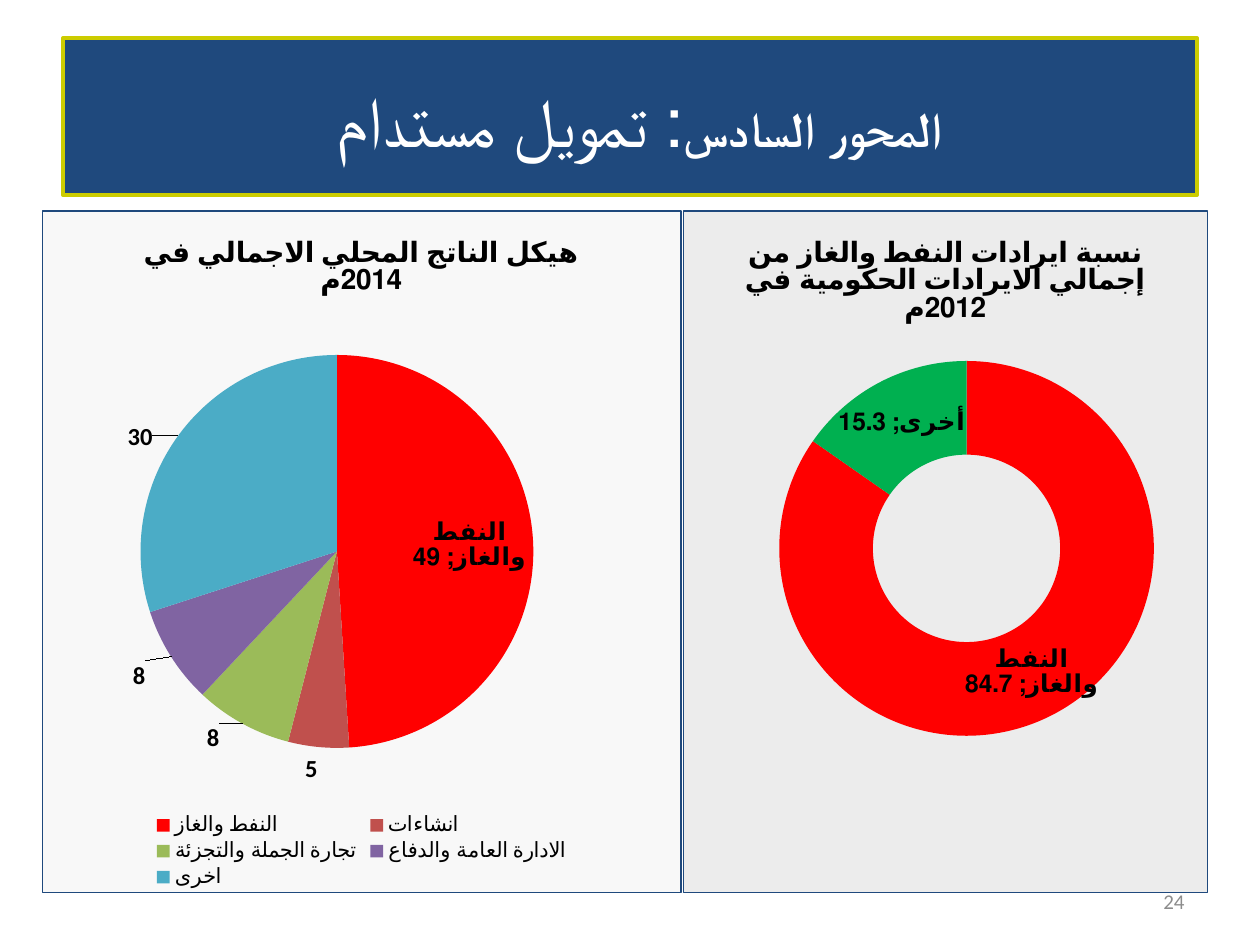
from dataclasses import dataclass

from lxml import etree
from pptx import Presentation
from pptx.chart import data as cd
from pptx.dml.color import RGBColor
from pptx.enum import chart as ch, shapes, text
from pptx.oxml import ns, parse_xml
from pptx.util import Inches, Pt

NAVY = RGBColor(0x1F, 0x49, 0x7D)
OLIVE = RGBColor(0xCC, 0xCC, 0x00)
WHITE = RGBColor(0xFF, 0xFF, 0xFF)
BLACK = RGBColor(0, 0, 0)
GREY = RGBColor(0x8C, 0x8C, 0x8C)
PALE = RGBColor(0xF2, 0xF2, 0xF2)
SILVER = RGBColor(0xD9, 0xD9, 0xD9)
RED = RGBColor(0xFF, 0, 0)
GREEN = RGBColor(0, 0xB0, 0x50)
BRICK = RGBColor(0xC0, 0x50, 0x4D)
LIME = RGBColor(0x9B, 0xBB, 0x59)
PURPLE = RGBColor(0x80, 0x64, 0xA2)
TEAL = RGBColor(0x4B, 0xAC, 0xC6)
FONT = "Calibri"


@dataclass(frozen=True)
class Slice:
    name: str
    value: float
    color: RGBColor
    named: bool = False
    position: ch.XL_LABEL_POSITION | None = None
    shift: tuple[float, float] | None = None


@dataclass(frozen=True)
class Panel:
    kind: ch.XL_CHART_TYPE
    title: str
    left: float
    width: float
    plot: tuple[float, float, float, float]
    background: RGBColor
    opacity: int
    slices: tuple[Slice, ...]
    legend: bool = False


OUTSIDE = ch.XL_LABEL_POSITION.OUTSIDE_END
PANELS = (
    Panel(ch.XL_CHART_TYPE.DOUGHNUT,
          "نسبة ايرادات النفط والغاز من إجمالي الايرادات الحكومية في 2012م",
          5.42, 4.17, (0.18, 0.22, 0.72, 0.55), SILVER, 49,
          (Slice("النفط والغاز", 84.7, RED, True),
           Slice("أخرى", 15.3, GREEN, True))),
    Panel(ch.XL_CHART_TYPE.PIE, "هيكل الناتج المحلي الاجمالي في 2014م",
          0.33, 5.08, (0.154, 0.192, 0.615, 0.615), PALE, 50,
          (Slice("النفط والغاز", 49, RED, True, ch.XL_LABEL_POSITION.INSIDE_END),
           Slice("انشاءات", 5, BRICK, False, OUTSIDE),
           Slice("تجارة الجملة والتجزئة", 8, LIME, False, OUTSIDE, (-0.03, -0.01)),
           Slice("الادارة العامة والدفاع", 8, PURPLE, False, OUTSIDE, (-0.03, 0)),
           Slice("اخرى", 30, TEAL, False, OUTSIDE, (-0.03, 0.03))), True),
)


def add_run(paragraph, words: str, size: float, color: RGBColor, bold: bool = False) -> None:
    run = paragraph.add_run()
    run.text = words
    style_font(run.font, size, color, bold)


def style_font(font, size: float, color: RGBColor, bold: bool = False) -> None:
    font.name, font.size, font.bold = FONT, Pt(size), bold
    font.color.rgb = color


def set_rtl(paragraph) -> None:
    paragraph._p.get_or_add_pPr().set("rtl", "1")


def manual_layout(**values: float | str):
    layout = etree.Element(ns.qn("c:layout"))
    manual = etree.SubElement(layout, ns.qn("c:manualLayout"))
    for tag, value in values.items():
        etree.SubElement(manual, ns.qn(f"c:{tag}")).set("val", str(value))
    return layout


def place_plot(chart, plot: tuple[float, float, float, float]) -> None:
    area = chart._chartSpace.chart.plotArea
    for layout in area.findall(ns.qn("c:layout")):
        area.remove(layout)
    x, y, w, h = plot
    area.insert(0, manual_layout(layoutTarget="inner", xMode="edge", yMode="edge",
                                 x=x, y=y, w=w, h=h))


def paint_background(chart, panel: Panel) -> None:
    chart._chartSpace.chart.addnext(parse_xml(
        f'<c:spPr {ns.nsdecls("c", "a")}><a:solidFill><a:srgbClr val="{panel.background}">'
        f'<a:alpha val="{panel.opacity * 1000}"/></a:srgbClr></a:solidFill>'
        f'<a:ln w="{Pt(0.75)}"><a:solidFill><a:srgbClr val="{NAVY}"/></a:solidFill></a:ln>'
        '</c:spPr>'))


def style_slice(series, index: int, part: Slice) -> None:
    point = series.points[index]
    point.format.fill.solid()
    point.format.fill.fore_color.rgb = part.color
    label = point.data_label
    style_font(label.font, 14, BLACK, True)
    if part.position is not None:
        label.position = part.position
    element = series._element.find(ns.qn("c:dLbls")).findall(ns.qn("c:dLbl"))[index]
    element.find(ns.qn("c:showCatName")).set("val", str(int(part.named)))
    if part.shift:
        x, y = part.shift
        element.find(ns.qn("c:idx")).addnext(manual_layout(x=x, y=y))


def add_panel(slide, panel: Panel) -> None:
    figures = cd.CategoryChartData()
    figures.categories = [part.name for part in panel.slices]
    figures.add_series("Series 1", [part.value for part in panel.slices])
    chart = slide.shapes.add_chart(panel.kind, Inches(panel.left), Inches(1.67),
                                   Inches(panel.width), Inches(5.42), figures).chart
    style_font(chart.font, 10, BLACK)
    paint_background(chart, panel)
    place_plot(chart, panel.plot)
    chart.has_title = True
    heading = chart.chart_title.text_frame.paragraphs[0]
    set_rtl(heading)
    add_run(heading, panel.title, 16, BLACK, True)
    chart.chart_title.include_in_layout = False
    chart.has_legend = panel.legend
    if panel.legend:
        chart.legend.position = ch.XL_LEGEND_POSITION.BOTTOM
        chart.legend.include_in_layout = False
        style_font(chart.legend.font, 12, BLACK)
    chart.plots[0].vary_by_categories = True
    series = chart.plots[0].series[0]
    for index, part in enumerate(panel.slices):
        style_slice(series, index, part)
    series.data_labels.show_value = True
    style_font(series.data_labels.font, 14, BLACK, True)


def add_banner(slide) -> None:
    banner = slide.shapes.add_shape(shapes.MSO_SHAPE.RECTANGLE, Inches(0.5), Inches(0.3),
                                    Inches(9), Inches(1.25))
    banner.shadow.inherit = False
    banner.fill.solid()
    banner.fill.fore_color.rgb = NAVY
    banner.line.color.rgb = OLIVE
    banner.line.width = Pt(2)
    banner.text_frame.vertical_anchor = text.MSO_ANCHOR.MIDDLE
    heading = banner.text_frame.paragraphs[0]
    heading.alignment = text.PP_ALIGN.CENTER
    set_rtl(heading)
    add_run(heading, "المحور السادس", 28, WHITE, True)
    add_run(heading, ": تمويل مستدام", 40, WHITE)
    add_run(heading, " ", 44, WHITE)


def add_page_number(slide) -> None:
    frame = slide.shapes.add_textbox(Inches(7.17), Inches(6.95),
                                     Inches(2.33), Inches(0.4)).text_frame
    frame.word_wrap = True
    frame.vertical_anchor = text.MSO_ANCHOR.MIDDLE
    frame.paragraphs[0].alignment = text.PP_ALIGN.RIGHT
    add_run(frame.paragraphs[0], "24", 12, GREY)


def main() -> None:
    """Build the slide on sustainable financing with its two revenue charts."""
    deck = Presentation()
    deck.slide_width, deck.slide_height = Inches(10), Inches(7.5)
    slide = deck.slides.add_slide(deck.slide_layouts[6])
    add_banner(slide)
    add_page_number(slide)
    for panel in PANELS:
        add_panel(slide, panel)
    deck.save("out.pptx")


if __name__ == "__main__":
    main()
